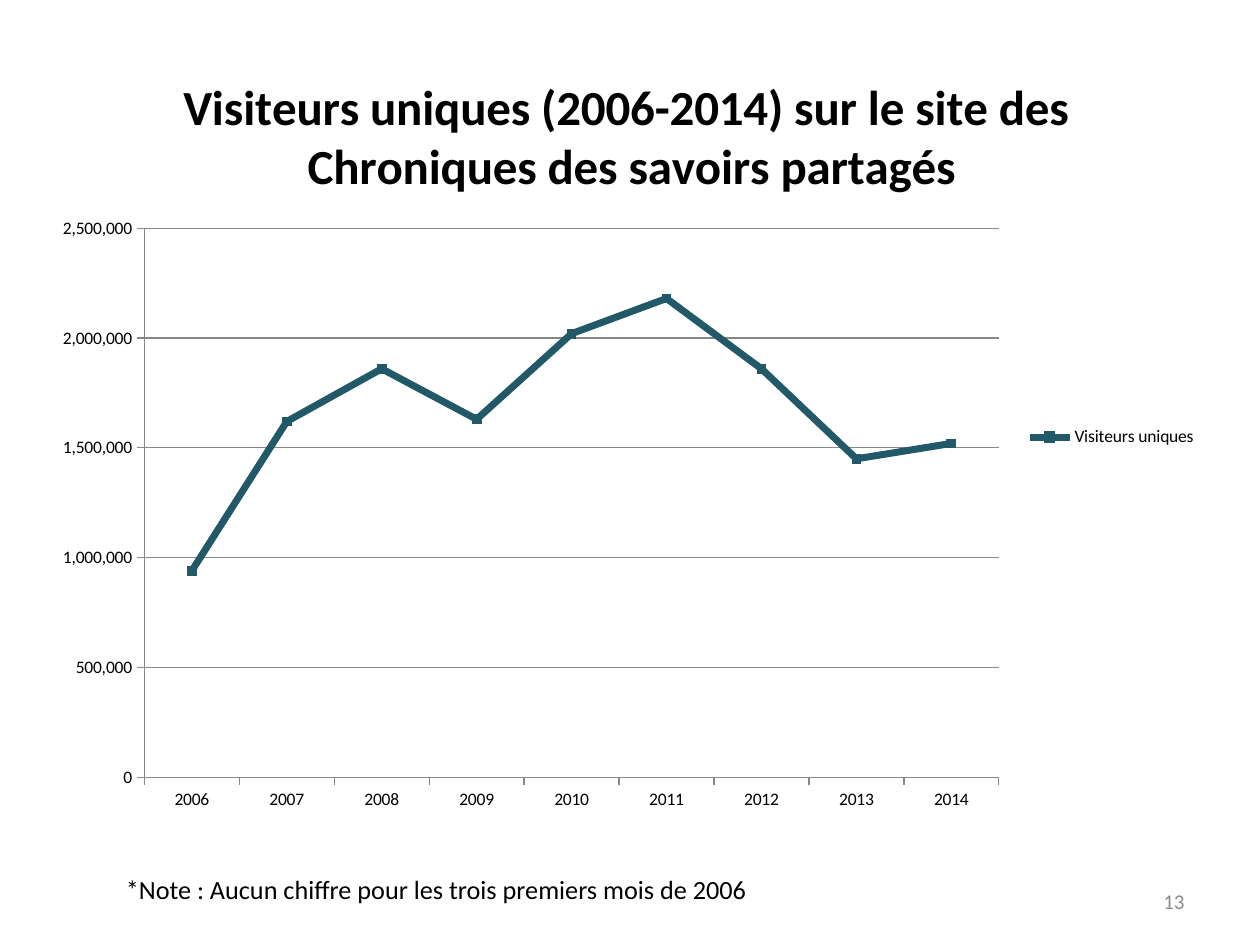
"""Build the slide on unique visitors from 2006 to 2014."""
from pptx import Presentation
from pptx.chart.data import CategoryChartData
from pptx.dml.color import RGBColor
from pptx.enum.chart import XL_CHART_TYPE, XL_LEGEND_POSITION, XL_MARKER_STYLE, XL_TICK_MARK
from pptx.enum.text import MSO_ANCHOR, PP_ALIGN
from pptx.oxml import parse_xml
from pptx.oxml.ns import nsdecls, qn
from pptx.util import Pt

LINE_MARKERS = XL_CHART_TYPE.LINE_MARKERS
LEGEND_RIGHT = XL_LEGEND_POSITION.RIGHT
SQUARE = XL_MARKER_STYLE.SQUARE
OUTSIDE = XL_TICK_MARK.OUTSIDE
TOP, MIDDLE = MSO_ANCHOR.TOP, MSO_ANCHOR.MIDDLE
LEFT, CENTER, RIGHT = PP_ALIGN.LEFT, PP_ALIGN.CENTER, PP_ALIGN.RIGHT

FONT = "Calibri"
COLORS = {"text": "000000", "visitors": "215968", "axis": "878787", "number": "8C8C8C"}
TITLE = "Visiteurs uniques (2006-2014) sur le site des\n Chroniques des savoirs partagés"
YEARS = [str(year) for year in range(2006, 2015)]
VISITORS = [940000, 1620000, 1860000, 1630000, 2020000, 2180000, 1860000, 1450000, 1520000]


def color(name):
    """Return a palette colour."""
    return RGBColor.from_string(COLORS[name])


def write(frame, text, size, ink="text", bold=False, align=LEFT):
    """Fill a text frame with one paragraph per line of text."""
    frame.text = text
    for paragraph in frame.paragraphs:
        paragraph.alignment = align
        for run in paragraph.runs:
            run.font.name, run.font.size, run.font.bold = FONT, Pt(size), bold
            run.font.color.rgb = color(ink)


def place(element, index, target="", **fractions):
    """Give a chart part a manual layout in fractions of the chart."""
    for layout in element.findall(qn("c:layout")):
        element.remove(layout)
    modes = "".join(f'<c:{key}Mode val="edge"/>' for key in "xy")
    extent = "".join(f'<c:{key} val="{value}"/>' for key, value in fractions.items())
    element.insert(index, parse_xml(
        f'<c:layout {nsdecls("c")}><c:manualLayout>{target}{modes}{extent}'
        '</c:manualLayout></c:layout>'))


class Deck:
    """Hold the style and the current slide."""

    def __init__(self, width, height):
        """Open a presentation with one blank slide."""
        self.presentation = Presentation()
        self.presentation.slide_width = Pt(width)
        self.presentation.slide_height = Pt(height)
        self.slide = self.presentation.slides.add_slide(self.presentation.slide_layouts[6])

    def text(self, text, box, wrap=True, anchor=TOP, **style):
        """Add a text box."""
        frame = self.slide.shapes.add_textbox(*map(Pt, box)).text_frame
        frame.word_wrap, frame.vertical_anchor = wrap, anchor
        write(frame, text, **style)

    def line_chart(self, title, name, categories, values, box):
        """Add a titled line chart with one series."""
        data = CategoryChartData(number_format="#,##0")
        data.categories = categories
        data.add_series(name, values)
        chart = self.slide.shapes.add_chart(LINE_MARKERS, *map(Pt, box), data).chart
        chart.font.name, chart.font.size = FONT, Pt(10)
        chart.font.color.rgb = color("text")
        write(chart.chart_title.text_frame, title, size=28, bold=True, align=CENTER)
        place(chart.chart_title._element, 1, x=0.12, y=0.03)
        place(chart.plots[0]._element.getparent(), 0, '<c:layoutTarget val="inner"/>',
              x=0.09, y=0.23, w=0.73, h=0.71)
        chart.has_legend = True
        chart.legend.position, chart.legend.include_in_layout = LEGEND_RIGHT, False
        self.axes(chart)
        self.series(chart.plots[0].series[0])

    def axes(self, chart):
        """Style both axes and the gridlines."""
        scale = chart.value_axis
        scale.minimum_scale, scale.maximum_scale, scale.major_unit = 0, 2500000, 500000
        scale.has_major_gridlines = True
        scale.tick_labels.number_format = "#,##0"
        scale.tick_labels.number_format_is_linked = False
        for axis in (scale, chart.category_axis):
            axis.major_tick_mark = OUTSIDE
        for part in (scale, chart.category_axis, scale.major_gridlines):
            part.format.line.color.rgb = color("axis")
            part.format.line.width = Pt(0.75)

    def series(self, series):
        """Style the series line and its markers."""
        series.smooth = False
        series.format.line.color.rgb = color("visitors")
        series.format.line.width = Pt(4)
        series.marker.style, series.marker.size = SQUARE, 5
        series.marker.format.fill.solid()
        series.marker.format.fill.fore_color.rgb = color("visitors")
        series.marker.format.line.color.rgb = color("visitors")


def main():
    """Build and save the slide."""
    deck = Deck(720, 540)
    deck.line_chart(TITLE, "Visiteurs uniques", YEARS, VISITORS, (22.3, 28.8, 668.9, 442))
    deck.text("*Note : Aucun chiffre pour les trois premiers mois de 2006",
              (64.8, 495.4, 373.7, 25.2), wrap=False, size=15)
    deck.text("13", (516.2, 500.4, 167.8, 28.8), anchor=MIDDLE,
              size=12, ink="number", align=RIGHT)
    deck.presentation.save("out.pptx")


if __name__ == "__main__":
    main()
